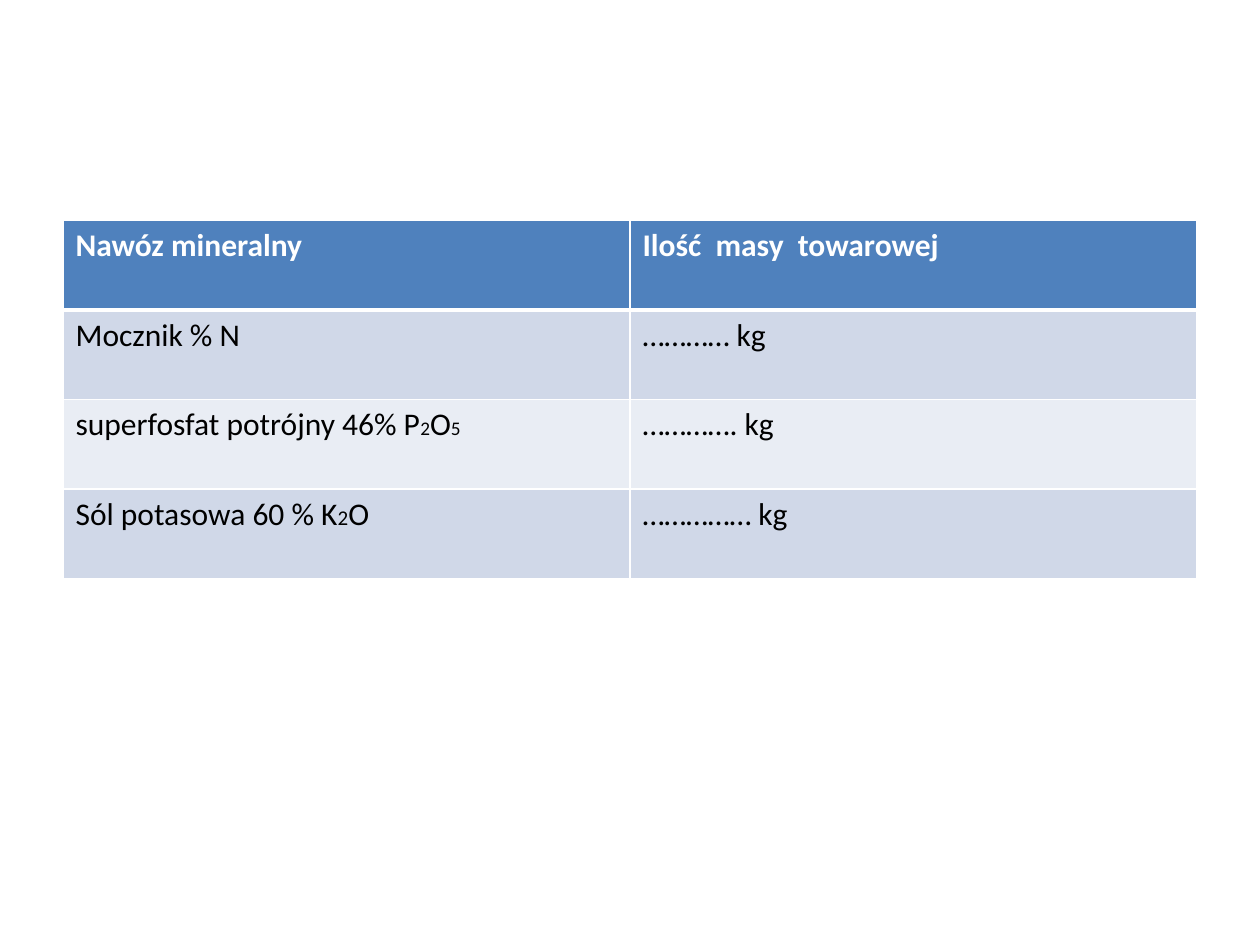
import dataclasses

import lxml.etree
import pptx
import pptx.dml.color
import pptx.oxml.ns
import pptx.util


@dataclasses.dataclass(frozen=True)
class Theme:
    """Colours and type sizes of the slide."""
    font: str = "Calibri"
    body_size: int = 18
    heading_fill: str = "4F81BD"
    heading_text: str = "FFFFFF"
    band_fills: tuple = ("D0D8E8", "E9EDF4")
    body_text: str = "000000"
    rule: str = "FFFFFF"
    rule_width: int = 1
    heading_rule_width: int = 3


THEME = Theme()
HEADINGS = ("Nawóz mineralny", "Ilość  masy  towarowej")
FERTILISERS = (
    ([("Mocznik % N", 18)], "………… kg"),
    ([("superfosfat potrójny 46% P", 18), ("2", 11), ("O", 18), ("5", 11)], "…………. kg"),
    ([("Sól potasowa 60 % K", 18), ("2", 12), ("O", 18)], "…………… kg"),
)


def rgb(code):
    """Turn a hex code into a colour."""
    return pptx.dml.color.RGBColor.from_string(code)


def rule_cell(cell, widths):
    """Draw the cell's borders with the given widths in points."""
    qn = pptx.oxml.ns.qn
    properties = cell._tc.get_or_add_tcPr()
    for side, width in widths.items():
        border = lxml.etree.SubElement(
            properties, qn(f"a:ln{side}"), w=str(pptx.util.Pt(width)))
        paint = lxml.etree.SubElement(border, qn("a:solidFill"))
        lxml.etree.SubElement(paint, qn("a:srgbClr"), val=THEME.rule)


def write_cell(cell, pieces, fill, text_colour, bold):
    """Fill a cell and write its pieces of (text, size)."""
    cell.fill.solid()
    cell.fill.fore_color.rgb = rgb(fill)
    paragraph = cell.text_frame.paragraphs[0]
    for text, size in pieces:
        run = paragraph.add_run()
        run.text = text
        run.font.color.rgb = rgb(text_colour)
        font_format = {"name": THEME.font, "size": pptx.util.Pt(size), "bold": bold}
        for attribute, value in font_format.items():
            setattr(run.font, attribute, value)


def add_fertiliser_table(slide, left, top, width, height):
    """Place the fertiliser table in the given box."""
    entries = [[[(heading, THEME.body_size)] for heading in HEADINGS]]
    entries += [[name, [(amount, THEME.body_size)]] for name, amount in FERTILISERS]
    table = slide.shapes.add_table(
        len(entries), len(HEADINGS), left, top, width, height).table
    for row, pieces_in_row in enumerate(entries):
        is_heading = row == 0
        fill = THEME.heading_fill if is_heading else THEME.band_fills[(row - 1) % 2]
        text_colour = THEME.heading_text if is_heading else THEME.body_text
        widths = dict.fromkeys("LRTB", THEME.rule_width)
        if is_heading:
            widths["B"] = THEME.heading_rule_width
        elif row == 1:
            widths["T"] = THEME.heading_rule_width
        for column, pieces in enumerate(pieces_in_row):
            cell = table.cell(row, column)
            rule_cell(cell, widths)
            write_cell(cell, pieces, fill, text_colour, is_heading)


def main():
    """Build the slide and save it."""
    inches = pptx.util.Inches
    presentation = pptx.Presentation()
    presentation.slide_width = inches(10)
    presentation.slide_height = inches(7.5)
    slide = presentation.slides.add_slide(presentation.slide_layouts[6])
    add_fertiliser_table(slide, inches(0.5), inches(1.75), inches(9), inches(2.84))
    presentation.save("out.pptx")


if __name__ == "__main__":
    main()
